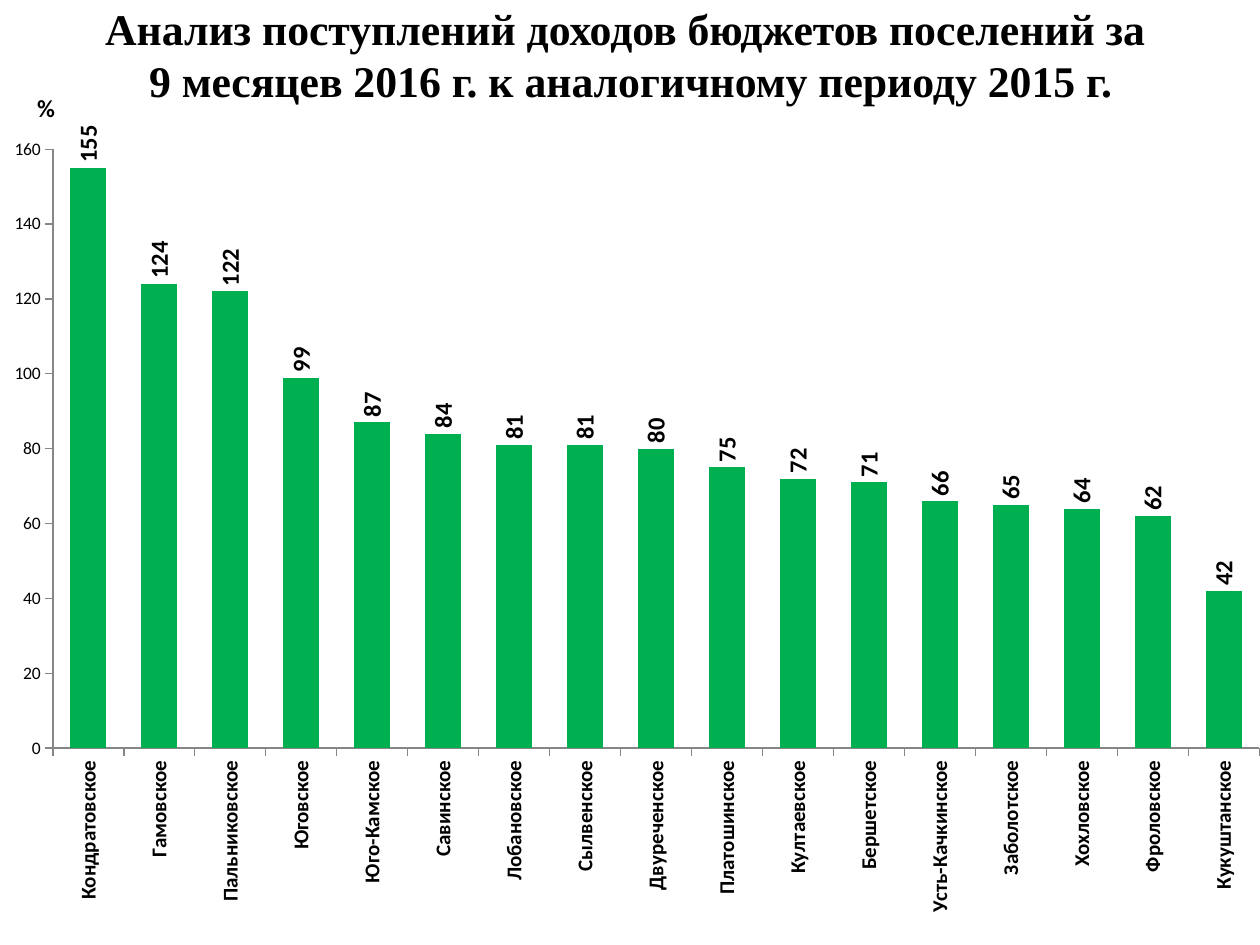
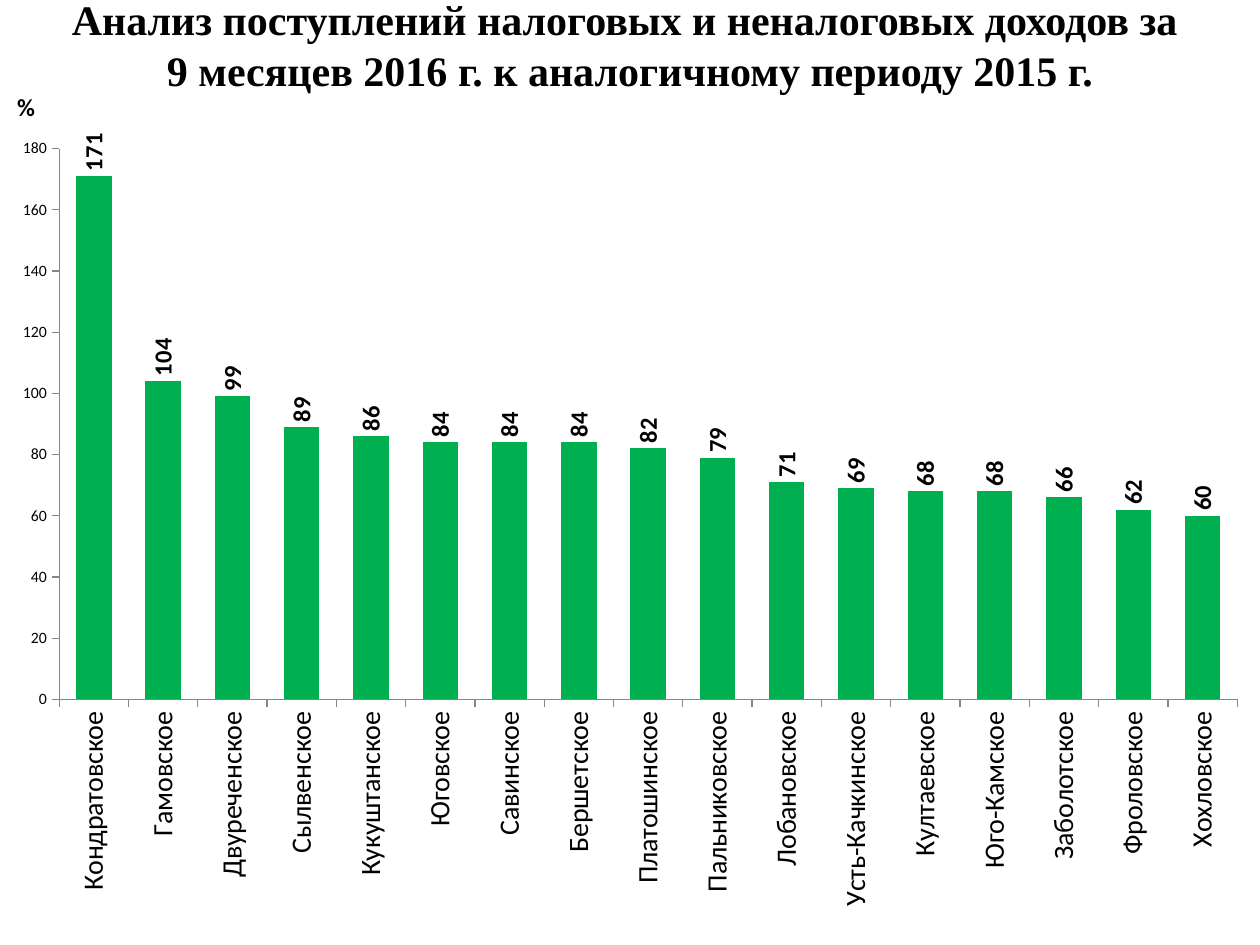
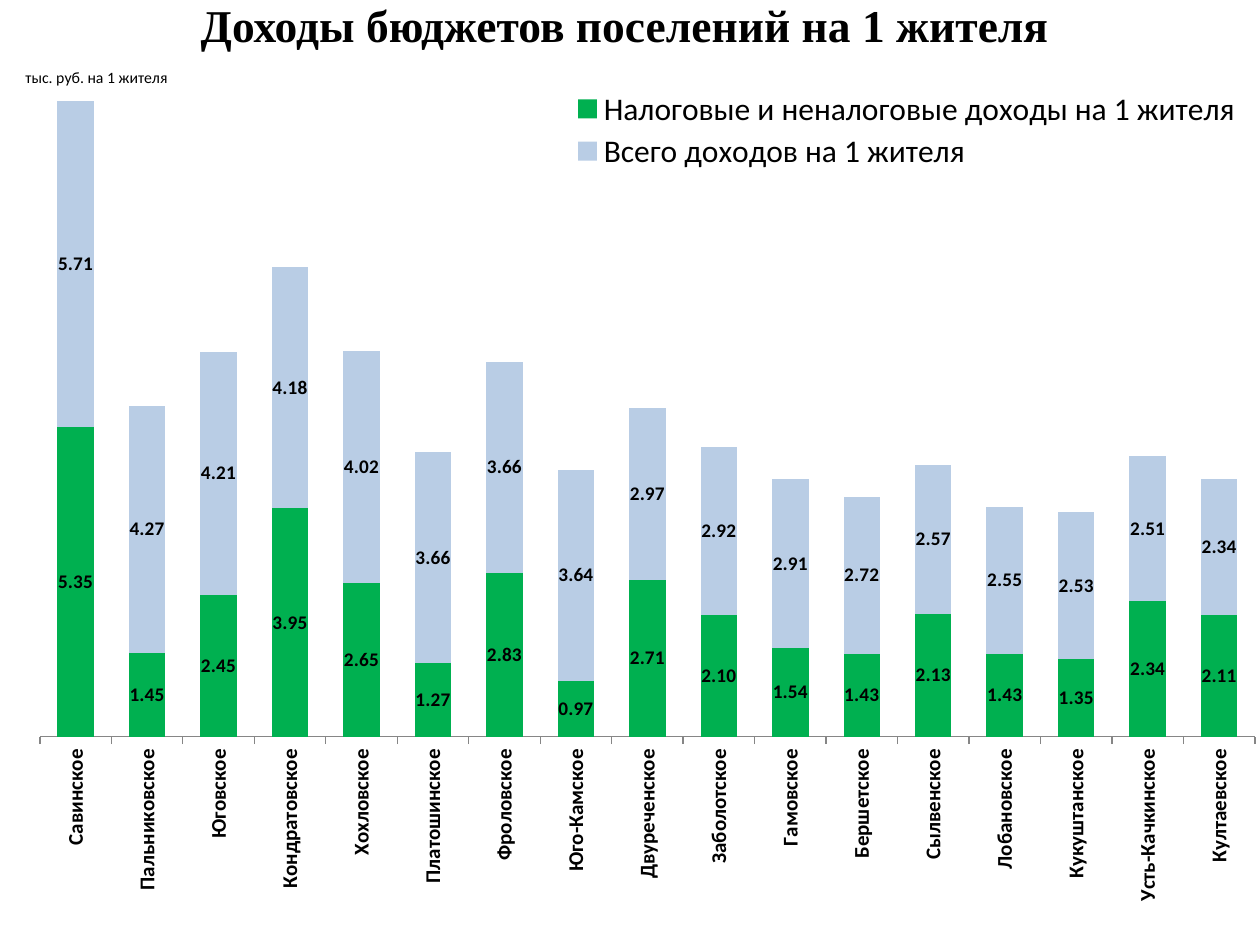
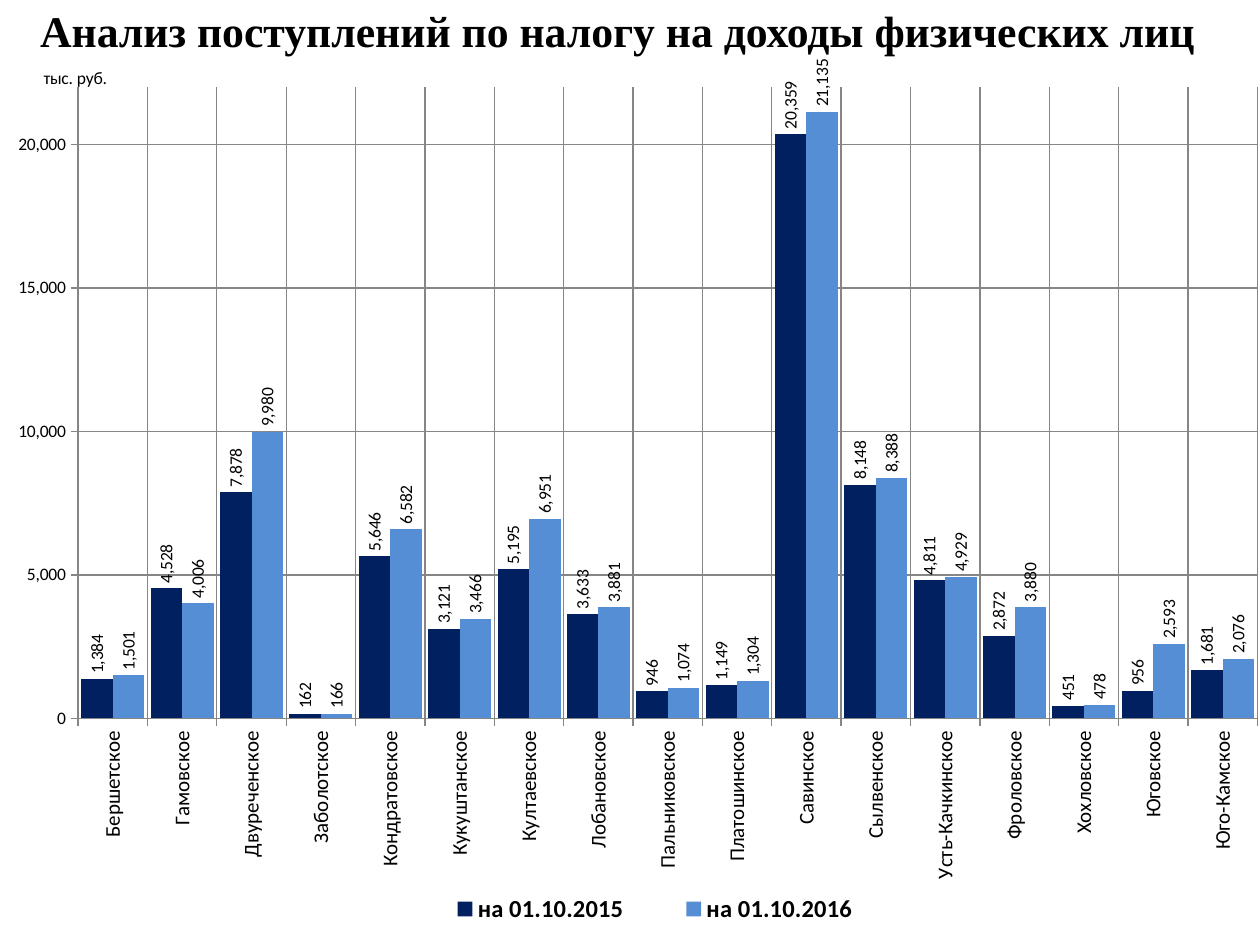
from dataclasses import dataclass

from lxml.etree import SubElement
from pptx import Presentation
from pptx.chart.data import CategoryChartData
from pptx.dml.color import RGBColor
from pptx.enum.chart import XL_CHART_TYPE, XL_LABEL_POSITION, XL_LEGEND_POSITION, XL_TICK_MARK
from pptx.enum.text import MSO_ANCHOR, PP_ALIGN
from pptx.oxml.ns import qn
from pptx.util import Inches, Pt

BLACK = RGBColor(0x00, 0x00, 0x00)
GRAY = RGBColor(0x86, 0x86, 0x86)
GREEN = RGBColor(0x00, 0xB0, 0x50)
PALE_BLUE = RGBColor(0xB9, 0xCD, 0xE5)
NAVY = RGBColor(0x00, 0x20, 0x60)
BLUE = RGBColor(0x55, 0x8E, 0xD5)

TITLE_FONT = "Times New Roman"
CHART_FONT = "Calibri"
UPWARD = -5400000

INCOME_GROWTH = {
    "Кондратовское": 155, "Гамовское": 124, "Пальниковское": 122, "Юговское": 99,
    "Юго-Камское": 87, "Савинское": 84, "Лобановское": 81, "Сылвенское": 81,
    "Двуреченское": 80, "Платошинское": 75, "Култаевское": 72, "Бершетское": 71,
    "Усть-Качкинское": 66, "Заболотское": 65, "Хохловское": 64, "Фроловское": 62,
    "Кукуштанское": 42,
}
OWN_INCOME_GROWTH = {
    "Кондратовское": 171, "Гамовское": 104, "Двуреченское": 99, "Сылвенское": 89,
    "Кукуштанское": 86, "Юговское": 84, "Савинское": 84, "Бершетское": 84,
    "Платошинское": 82, "Пальниковское": 79, "Лобановское": 71, "Усть-Качкинское": 69,
    "Култаевское": 68, "Юго-Камское": 68, "Заболотское": 66, "Фроловское": 62,
    "Хохловское": 60,
}
INCOME_PER_RESIDENT = {
    "Савинское": (5.35, 5.71), "Пальниковское": (1.45, 4.27), "Юговское": (2.45, 4.21),
    "Кондратовское": (3.95, 4.18), "Хохловское": (2.65, 4.02), "Платошинское": (1.27, 3.66),
    "Фроловское": (2.83, 3.66), "Юго-Камское": (0.97, 3.64), "Двуреченское": (2.71, 2.97),
    "Заболотское": (2.10, 2.92), "Гамовское": (1.54, 2.91), "Бершетское": (1.43, 2.72),
    "Сылвенское": (2.13, 2.57), "Лобановское": (1.43, 2.55), "Кукуштанское": (1.35, 2.53),
    "Усть-Качкинское": (2.34, 2.51), "Култаевское": (2.11, 2.34),
}
INCOME_TAX = {
    "Бершетское": (1384, 1501), "Гамовское": (4528, 4006), "Двуреченское": (7878, 9980),
    "Заболотское": (162, 166), "Кондратовское": (5646, 6582), "Кукуштанское": (3121, 3466),
    "Култаевское": (5195, 6951), "Лобановское": (3633, 3881), "Пальниковское": (946, 1074),
    "Платошинское": (1149, 1304), "Савинское": (20359, 21135), "Сылвенское": (8148, 8388),
    "Усть-Качкинское": (4811, 4929), "Фроловское": (2872, 3880), "Хохловское": (451, 478),
    "Юговское": (956, 2593), "Юго-Камское": (1681, 2076),
}


@dataclass
class ColumnStyle:
    """Layouts are fractions of the chart: left, top and, where sized, width, height."""
    plot: tuple
    unit: str
    unit_size: int
    unit_at: tuple
    maximum: float
    major: float
    category_size: int = 12
    value_size: int = 10
    label_size: int = 14
    bold_categories: bool = False
    bold_labels: bool = True
    bold_unit: bool = False
    number_format: str = "#,##0"
    gap: int = 96
    stacked: bool = False
    gridlines: bool = False


def add_title(slide, text, box, size):
    frame = slide.shapes.add_textbox(*map(Inches, box)).text_frame
    frame.word_wrap = True
    frame.vertical_anchor = MSO_ANCHOR.MIDDLE
    paragraph = frame.paragraphs[0]
    paragraph.text = text
    paragraph.alignment = PP_ALIGN.CENTER
    for run in paragraph.runs:
        set_font(run.font, size, True, TITLE_FONT)


def set_font(font, size, bold=False, name=CHART_FONT):
    font.name = name
    font.size = Pt(size)
    font.bold = bold
    font.color.rgb = BLACK


def rotate_text(element, angle):
    body = next(element.iter(qn("a:bodyPr")))
    body.set("rot", str(angle))
    body.set("vert", "horz")


def set_layout(parent, fractions, after=None, inner=False):
    """Give a chart part a manual layout, placed after the named child or first."""
    for old in parent.findall(qn("c:layout")):
        parent.remove(old)
    layout = SubElement(parent, qn("c:layout"))
    if after:
        parent.find(qn(after)).addnext(layout)
    else:
        parent.insert(0, layout)
    manual = SubElement(layout, qn("c:manualLayout"))
    settings = [("layoutTarget", "inner")] if inner else []
    settings += [("xMode", "edge"), ("yMode", "edge")]
    settings += zip("xywh", fractions)
    for name, value in settings:
        SubElement(manual, qn(f"c:{name}")).set("val", str(value))


def format_axes(chart, style):
    category_axis, value_axis = chart.category_axis, chart.value_axis
    for axis in (category_axis, value_axis):
        axis.major_tick_mark = XL_TICK_MARK.OUTSIDE
        axis.minor_tick_mark = XL_TICK_MARK.NONE
        axis.format.line.color.rgb = GRAY
        axis.has_major_gridlines = style.gridlines
        if style.gridlines:
            axis.major_gridlines.format.line.color.rgb = GRAY
    set_font(category_axis.tick_labels.font, style.category_size, style.bold_categories)
    rotate_text(category_axis._element.find(qn("c:txPr")), UPWARD)

    set_font(value_axis.tick_labels.font, style.value_size)
    value_axis.tick_labels.number_format = style.number_format
    value_axis.tick_labels.number_format_is_linked = False
    value_axis.minimum_scale = 0
    value_axis.maximum_scale = style.maximum
    value_axis.major_unit = style.major
    value_axis.visible = not style.stacked

    unit_frame = value_axis.axis_title.text_frame
    unit_frame.text = style.unit
    set_font(unit_frame.paragraphs[0].runs[0].font, style.unit_size, style.bold_unit)
    unit_title = value_axis._element.find(qn("c:title"))
    rotate_text(unit_title, 0)
    set_layout(unit_title, style.unit_at, after="c:tx")


def format_series(series, color, style):
    series.format.fill.solid()
    series.format.fill.fore_color.rgb = color
    series.invert_if_negative = False
    labels = series.data_labels
    labels.show_value = True
    labels.number_format = style.number_format
    labels.number_format_is_linked = False
    set_font(labels.font, style.label_size, style.bold_labels)
    if style.stacked:
        labels.position = XL_LABEL_POSITION.CENTER
    else:
        labels.position = XL_LABEL_POSITION.OUTSIDE_END
        rotate_text(labels._element.find(qn("c:txPr")), UPWARD)


def add_columns(slide, box, categories, series, style):
    """Draw a column chart; series holds (name, values, colour) triples."""
    data = CategoryChartData(number_format=style.number_format)
    data.categories = categories
    for name, values, _ in series:
        data.add_series(name, values)
    kind = XL_CHART_TYPE.COLUMN_STACKED if style.stacked else XL_CHART_TYPE.COLUMN_CLUSTERED
    chart = slide.shapes.add_chart(kind, *map(Inches, box), data).chart
    chart.has_title = False
    chart.has_legend = False
    set_font(chart.font, 18)
    plot = chart.plots[0]
    plot.vary_by_categories = False
    plot.gap_width = style.gap
    plot.overlap = 100 if style.stacked else 0
    for drawn, (_, _, color) in zip(plot.series, series):
        format_series(drawn, color, style)
    format_axes(chart, style)
    set_layout(next(chart.element.iter(qn("c:plotArea"))), style.plot, inner=True)
    return chart


def add_legend(chart, position, layout, size, bold=False):
    chart.has_legend = True
    chart.legend.position = position
    chart.legend.include_in_layout = False
    set_font(chart.legend.font, size, bold)
    set_layout(next(chart.element.iter(qn("c:legend"))), layout, after="c:legendPos")


def add_growth_slide(slide, title, title_box, title_size, chart_box, growth, style):
    add_title(slide, title, title_box, title_size)
    series = [("Series 1", list(growth.values()), GREEN)]
    add_columns(slide, chart_box, list(growth), series, style)


def add_pair_slide(slide, title, title_box, title_size, chart_box, pairs, names, colors, style):
    add_title(slide, title, title_box, title_size)
    series = list(zip(names, zip(*pairs.values()), colors))
    return add_columns(slide, chart_box, list(pairs), series, style)


def main():
    presentation = Presentation()
    presentation.slide_width = Inches(10)
    presentation.slide_height = Inches(7.5)
    blank = presentation.slide_layouts[6]
    slides = [presentation.slides.add_slide(blank) for _ in range(4)]

    add_growth_slide(
        slides[0],
        "Анализ поступлений доходов бюджетов поселений за \n"
        "9 месяцев 2016 г. к аналогичному периоду 2015 г.",
        (0.2, 0, 9.61, 0.86), 25, (0, 0.62, 10, 6.88), INCOME_GROWTH,
        ColumnStyle(plot=(0.042, 0.082, 0.958, 0.691), unit="%", unit_size=14, bold_unit=True,
                    unit_at=(0.026, 0.01), maximum=160, major=20, bold_categories=True))

    add_growth_slide(
        slides[1],
        "Анализ поступлений налоговых и неналоговых доходов за \n"
        "9 месяцев 2016 г. к аналогичному периоду 2015 г.",
        (0, 0, 10, 0.7), 24, (0, 0.47, 10, 7.03), OWN_INCOME_GROWTH,
        ColumnStyle(plot=(0.047, 0.101, 0.935, 0.622), unit="%", unit_size=14, bold_unit=True,
                    unit_at=(0.01, 0.03), maximum=180, major=20, category_size=16, value_size=9))

    chart = add_pair_slide(
        slides[2], "Доходы бюджетов поселений на 1 жителя ",
        (0.2, 0, 9.61, 0.39), 26, (0.16, 0.47, 9.84, 7.03), INCOME_PER_RESIDENT,
        ("Налоговые и неналоговые доходы на 1 жителя", "Всего доходов на 1 жителя"),
        (GREEN, PALE_BLUE),
        ColumnStyle(plot=(0.016, 0.047, 0.98, 0.718), unit="тыс. руб. на 1 жителя", unit_size=9,
                    unit_at=(0.002, 0.006), maximum=11, major=2, label_size=11,
                    bold_categories=True, number_format="0.00", stacked=True))
    add_legend(chart, XL_LEGEND_POSITION.TOP, (0.44, 0.03, 0.55, 0.1), 18)

    chart = add_pair_slide(
        slides[3], "Анализ поступлений по налогу на доходы физических лиц",
        (0, 0, 9.8, 0.47), 25, (0, 0.39, 10, 7), INCOME_TAX,
        ("на 01.10.2015", "на 01.10.2016"), (NAVY, BLUE),
        ColumnStyle(plot=(0.062, 0.043, 0.936, 0.716), unit="тыс. руб.", unit_size=10,
                    unit_at=(0.032, 0.016), maximum=22000, major=5000, label_size=10,
                    bold_labels=False, gap=20, gridlines=True))
    add_legend(chart, XL_LEGEND_POSITION.BOTTOM, (0.32, 0.95, 0.4, 0.05), 14, True)

    presentation.save("out.pptx")


if __name__ == "__main__":
    main()
